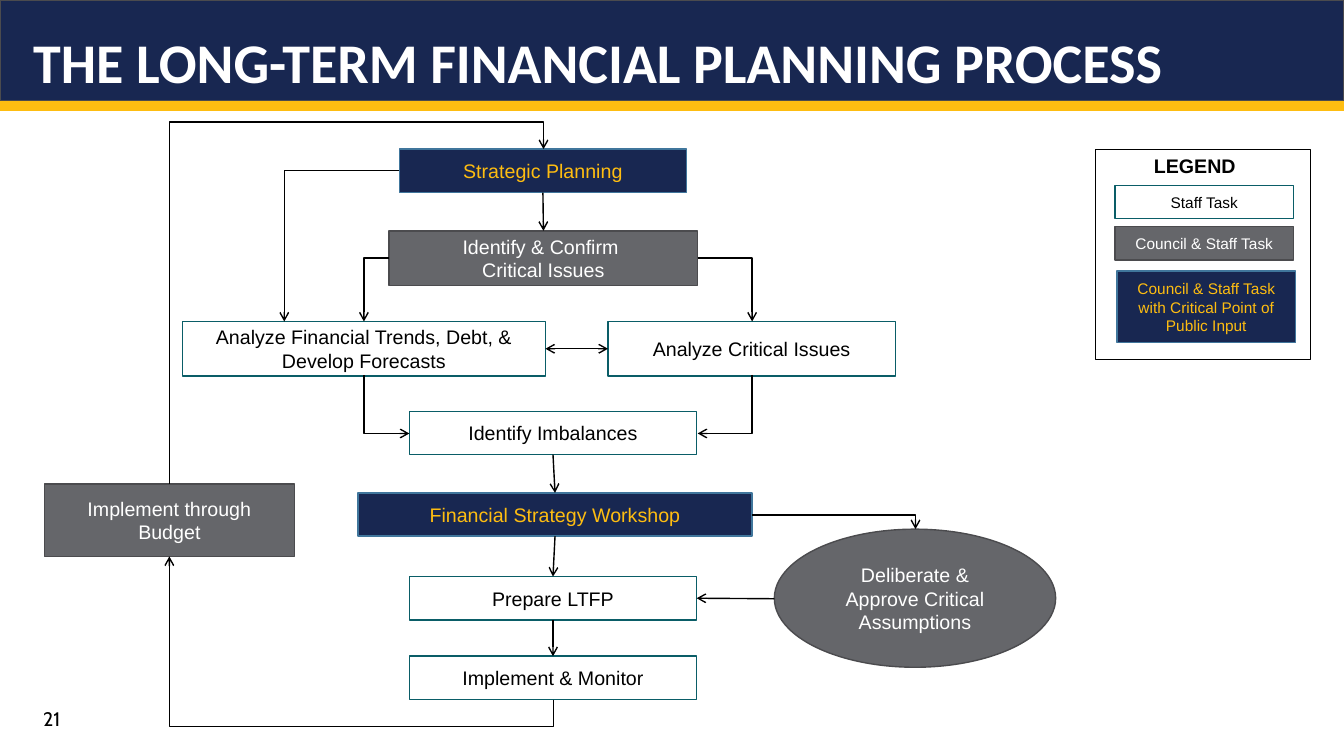
from dataclasses import dataclass

from lxml import etree
from pptx import Presentation, util as u
from pptx.dml.color import RGBColor
from pptx.enum import shapes, text
from pptx.oxml import ns


@dataclass(frozen=True)
class Theme:
    navy: str = "182751"
    gold: str = "FEBD11"
    gray: str = "65666A"
    gray_line: str = "4B4B4E"
    blue_line: str = "40769C"
    teal_line: str = "0A5D67"
    white: str = "FFFFFF"
    black: str = "000000"
    title_size: int = 40
    body_size: int = 14
    legend_size: int = 11
    body_font: str = "Arial"
    title_font: str = "Calibri"
    number_font: str = "Cabin"


theme = Theme()
# Task kind: fill, outline, text colour
STAFF = (theme.white, theme.teal_line, theme.black)
COUNCIL = (theme.gray, theme.gray_line, theme.white)
PUBLIC = (theme.navy, theme.blue_line, theme.gold)
RECTANGLE, OVAL = shapes.MSO_SHAPE.RECTANGLE, shapes.MSO_SHAPE.OVAL
CENTER, LEFT = text.PP_ALIGN.CENTER, text.PP_ALIGN.LEFT

presentation = Presentation()
presentation.slide_width = u.Inches(13.33)
presentation.slide_height = u.Inches(7.5)
slide = presentation.slides.add_slide(presentation.slide_layouts[6])


def add_box(place, fill, line, line_width=1, outline=RECTANGLE):
    shape = slide.shapes.add_shape(outline, *map(u.Inches, place))
    shape.shadow.inherit = False
    if fill:
        shape.fill.solid()
        shape.fill.fore_color.rgb = RGBColor.from_string(fill)
    else:
        shape.fill.background()
    if line:
        shape.line.color.rgb = RGBColor.from_string(line)
        shape.line.width = u.Pt(line_width)
    else:
        shape.line.fill.background()
    return shape


def write(shape, wording, color, size, font=theme.body_font, bold=False,
          align=CENTER, anchor=text.MSO_ANCHOR.MIDDLE):
    frame = shape.text_frame
    frame.word_wrap = True
    frame.vertical_anchor = anchor
    paragraph = frame.paragraphs[0]
    paragraph.alignment = align
    for index, line in enumerate(wording.split("\n")):
        if index:
            paragraph.add_line_break()
        run = paragraph.add_run()
        run.text = line
        run.font.size, run.font.name, run.font.bold = u.Pt(size), font, bold
        run.font.color.rgb = RGBColor.from_string(color)
    return paragraph


# Header band, title and page number
add_box((0, 1, 13.33, 0.1), theme.gold, None)
add_box((0, 0, 13.33, 1), theme.navy, theme.gray_line)
title = slide.shapes.add_textbox(*map(u.Inches, (0.33, 0, 12.67, 1)))
title.text_frame.margin_left = title.text_frame.margin_right = 0
paragraph = write(title, "THE LONG-TERM FINANCIAL PLANNING PROCESS", theme.white,
                  theme.title_size, theme.title_font, True, LEFT, text.MSO_ANCHOR.BOTTOM)
paragraph.line_spacing = 0.9
number = slide.shapes.add_textbox(*map(u.Inches, (0.33, 6.96, 2.07, 0.34)))
write(number, "21", theme.black, theme.body_size, theme.number_font,
      align=LEFT, anchor=text.MSO_ANCHOR.TOP)

# Process steps
steps = {}
for name, place, kind, wording in (
    ("strategy", (3.96, 1.48, 2.85, 0.43), PUBLIC, "Strategic Planning"),
    ("confirm", (3.86, 2.29, 3.06, 0.54), COUNCIL, "Identify & Confirm \nCritical Issues"),
    ("trends", (1.81, 3.19, 3.6, 0.54), STAFF,
     "Analyze Financial Trends, Debt, & Develop Forecasts"),
    ("issues", (6.03, 3.19, 2.85, 0.54), STAFF, "Analyze Critical Issues"),
    ("imbalances", (4.06, 4.08, 2.85, 0.43), STAFF, "Identify Imbalances"),
    ("workshop", (3.55, 4.89, 3.91, 0.43), PUBLIC, "Financial Strategy Workshop"),
    ("prepare", (4.06, 5.72, 2.85, 0.43), STAFF, "Prepare LTFP"),
    ("monitor", (4.06, 6.51, 2.85, 0.43), STAFF, "Implement & Monitor"),
    ("budget", (0.44, 4.8, 2.48, 0.72), COUNCIL, "Implement through Budget"),
    ("deliberate", (7.68, 5.25, 2.79, 1.37), COUNCIL,
     "Deliberate & Approve Critical Assumptions"),
):
    fill, line, color = kind
    outline = OVAL if name == "deliberate" else RECTANGLE
    steps[name] = add_box(place, fill, line, outline=outline)
    write(steps[name], wording, color, theme.body_size)

# Straight arrows, joined to box sides: 0 top, 1 left, 2 bottom, 3 right
arrows = []
for start, start_side, end, end_side in (
    ("strategy", 2, "confirm", 0),
    ("trends", 3, "issues", 1),
    ("imbalances", 2, "workshop", 0),
    ("workshop", 2, "prepare", 0),
    ("prepare", 2, "monitor", 0),
    ("deliberate", None, "prepare", 3),
):
    connector = slide.shapes.add_connector(
        shapes.MSO_CONNECTOR.STRAIGHT, *map(u.Inches, (7.68, 5.94, 6.91, 5.94)))
    if start_side is not None:  # the oval's left point is not a rectangle side
        connector.begin_connect(steps[start], start_side)
    connector.end_connect(steps[end], end_side)
    arrows.append((connector, start == "trends"))

# Elbow arrows: start, end, leaves vertically, level of the middle leg
for (x1, y1), (x2, y2), vertical, level in (
    ((6.92, 2.56), (7.46, 3.19), False, None),
    ((3.96, 1.69), (2.82, 3.19), False, None),
    ((3.86, 2.56), (3.61, 3.19), False, None),
    ((3.61, 3.72), (4.06, 4.3), True, None),
    ((7.46, 3.72), (6.92, 4.3), True, None),
    ((7.46, 5.11), (9.08, 5.25), False, None),
    ((5.49, 6.94), (1.68, 5.52), True, 7.21),
    ((1.68, 4.8), (5.39, 1.48), True, 1.21),
):
    ends = (x1, y1, x2, y2)
    if vertical:  # lay the route out sideways, then turn it a quarter
        middle_x, middle_y = (x1 + x2) / 2, (y1 + y2) / 2
        half_x, half_y = (x2 - x1) / 2, (y2 - y1) / 2
        ends = (middle_x - half_y, middle_y + half_x, middle_x + half_y, middle_y - half_x)
    connector = slide.shapes.add_connector(shapes.MSO_CONNECTOR.ELBOW, *map(u.Inches, ends))
    properties = connector._element.spPr
    geometry = properties.find(ns.qn("a:prstGeom"))
    if vertical:
        properties.find(ns.qn("a:xfrm")).set("rot", "5400000")
    if level is None:
        geometry.set("prst", "bentConnector2")
    else:
        adjustments = geometry.find(ns.qn("a:avLst"))
        if adjustments is None:
            adjustments = etree.SubElement(geometry, ns.qn("a:avLst"))
        bend = round((level - y1) / (y2 - y1) * 100000)
        etree.SubElement(adjustments, ns.qn("a:gd"), name="adj1", fmla=f"val {bend}")
    arrows.append((connector, False))

# Arrow line style
for connector, both_ends in arrows:
    connector.line.color.rgb = RGBColor.from_string(theme.black)
    connector.line.width = u.Pt(1)
    line = connector.line._get_or_add_ln()
    for tag in ("a:headEnd", "a:tailEnd") if both_ends else ("a:tailEnd",):
        etree.SubElement(line, ns.qn(tag), type="arrow")
    etree.SubElement(connector._element.spPr, ns.qn("a:effectLst"))

# Legend
for place, (fill, line, color), wording in (
    ((11.06, 1.84, 1.77, 0.33), STAFF, "Staff Task"),
    ((11.06, 2.25, 1.77, 0.33), COUNCIL, "Council & Staff Task"),
    ((11.08, 2.69, 1.77, 0.71), PUBLIC,
     "Council & Staff Task with Critical Point of Public Input"),
):
    write(add_box(place, fill, line), wording, color, theme.legend_size)
heading = slide.shapes.add_textbox(*map(u.Inches, (10.86, 1.48, 1.98, 0.34)))
write(heading, "LEGEND", theme.black, theme.body_size, bold=True, anchor=text.MSO_ANCHOR.TOP)
add_box((10.86, 1.48, 2.14, 2.08), None, theme.black, 0.25)

presentation.save("out.pptx")
